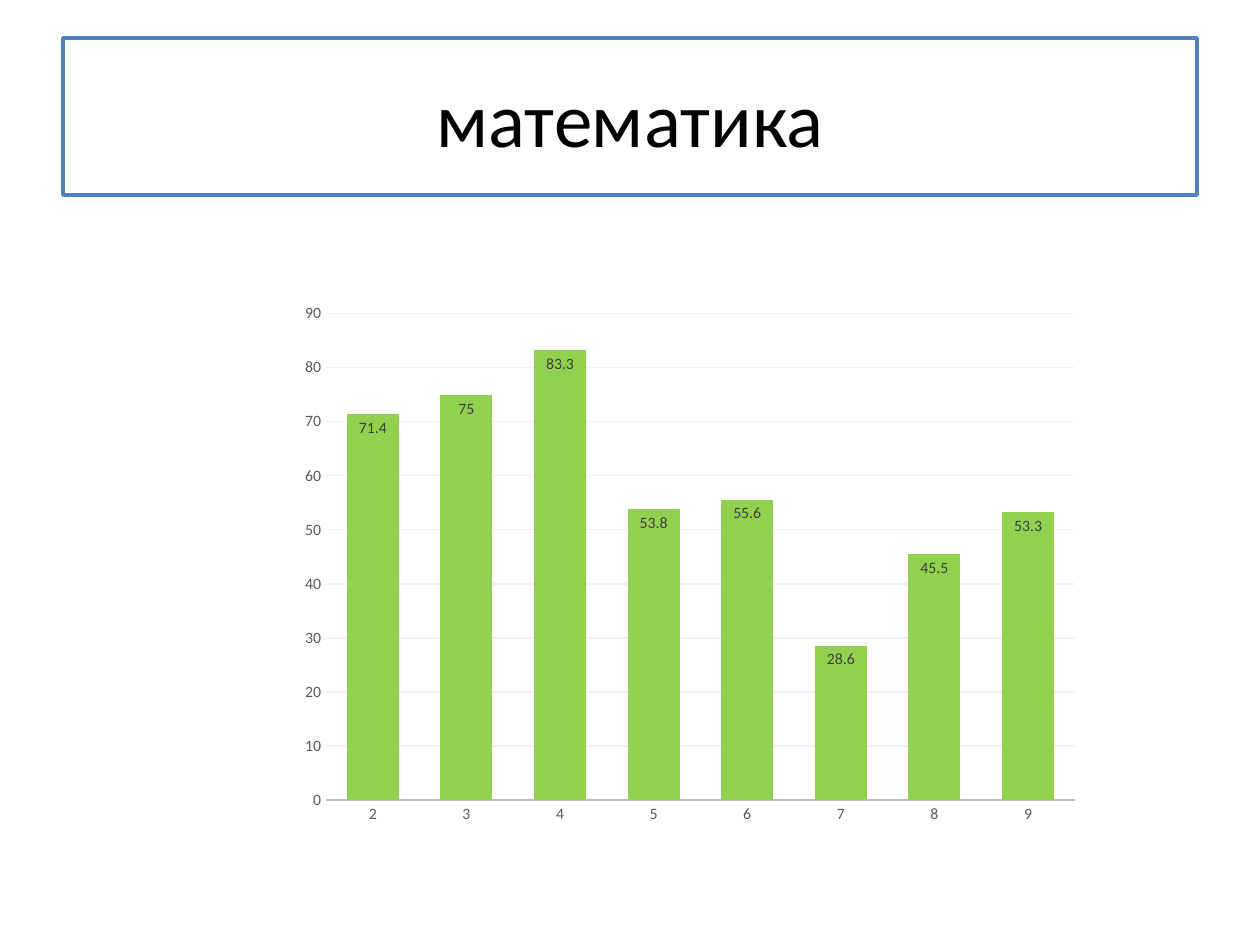
from lxml import etree
from pptx import Presentation
from pptx.chart.data import CategoryChartData
from pptx.dml.color import RGBColor
from pptx.enum.chart import XL_CHART_TYPE, XL_LABEL_POSITION, XL_TICK_MARK
from pptx.enum.text import MSO_ANCHOR, PP_ALIGN
from pptx.oxml.ns import qn
from pptx.util import Pt

STACKED = XL_CHART_TYPE.COLUMN_STACKED
INSIDE = XL_LABEL_POSITION.INSIDE_END
NO_TICK = XL_TICK_MARK.NONE
MIDDLE = MSO_ANCHOR.MIDDLE
CENTER = PP_ALIGN.CENTER

SCALE = 914400 / 126
FACE = "Calibri"
COLORS = {
    "paper": "FFFFFF", "frame": "4F81BD", "ink": "000000", "bar": "92D050",
    "label": "404040", "tick": "595959", "axis": "BFBFBF", "grid": "F2F2F2",
}
GRADES = ["2", "3", "4", "5", "6", "7", "8", "9"]
SCORES = [71.4, 75, 83.3, 53.8, 55.6, 28.6, 45.5, 53.3]
PLOT = {"x": 0.26, "y": 0.15, "w": 0.74, "h": 0.78}


def px(num):
    return round(num * SCALE)


def color(name):
    return RGBColor.from_string(COLORS[name])


def style(font, size, name):
    font.size = Pt(size)
    font.name = FACE
    font.color.rgb = color(name)


def stroke(line, name, width):
    line.color.rgb = color(name)
    line.width = Pt(width)


def add_title(slide, box, text):
    title = slide.shapes.title
    title.left, title.top, title.width, title.height = map(px, box)
    title.fill.solid()
    title.fill.fore_color.rgb = color("paper")
    stroke(title.line, "frame", 2)
    frame = title.text_frame
    frame.text = text
    frame.vertical_anchor = MIDDLE
    para = frame.paragraphs[0]
    para.alignment = CENTER
    style(para.runs[0].font, 44, "ink")


def set_plot(chart):
    """Fix the inner plot area as fractions of the chart box."""
    area = chart._chartSpace.chart.plotArea
    for old in area.findall(qn("c:layout")):
        area.remove(old)
    layout = etree.Element(qn("c:layout"))
    area.insert(0, layout)
    manual = etree.SubElement(layout, qn("c:manualLayout"))
    rules = [("layoutTarget", "inner"), ("xMode", "edge"), ("yMode", "edge")]
    for tag, val in rules + list(PLOT.items()):
        etree.SubElement(manual, qn(f"c:{tag}")).set("val", str(val))


def add_bars(slide, box):
    data = CategoryChartData()
    data.categories = GRADES
    data.add_series("Series 1", SCORES)
    chart = slide.shapes.add_chart(STACKED, *map(px, box), data).chart
    chart.has_legend = chart.has_title = False
    style(chart.font, 10, "ink")
    set_plot(chart)

    cats, vals = chart.category_axis, chart.value_axis
    for axis in (cats, vals):
        axis.major_tick_mark = axis.minor_tick_mark = NO_TICK
        style(axis.tick_labels.font, 9, "tick")
    stroke(cats.format.line, "axis", 1.25)
    vals.format.line.fill.background()
    vals.minimum_scale, vals.maximum_scale, vals.major_unit = 0, 90, 10
    stroke(vals.major_gridlines.format.line, "grid", 0.75)

    plot = chart.plots[0]
    plot.gap_width, plot.overlap = 80, 100
    plot.vary_by_categories = False
    bars = plot.series[0]
    bars.format.fill.solid()
    bars.format.fill.fore_color.rgb = color("bar")
    labels = bars.data_labels
    labels.show_value = True
    labels.position = INSIDE
    style(labels.font, 9, "label")


def main():
    deck = Presentation()
    deck.slide_width, deck.slide_height = px(1260), px(945)
    slide = deck.slides.add_slide(deck.slide_layouts[5])
    add_title(slide, (63, 38, 1134, 157), "математика")
    add_bars(slide, (63, 220, 1013, 624))
    deck.save("out.pptx")


if __name__ == "__main__":
    main()
